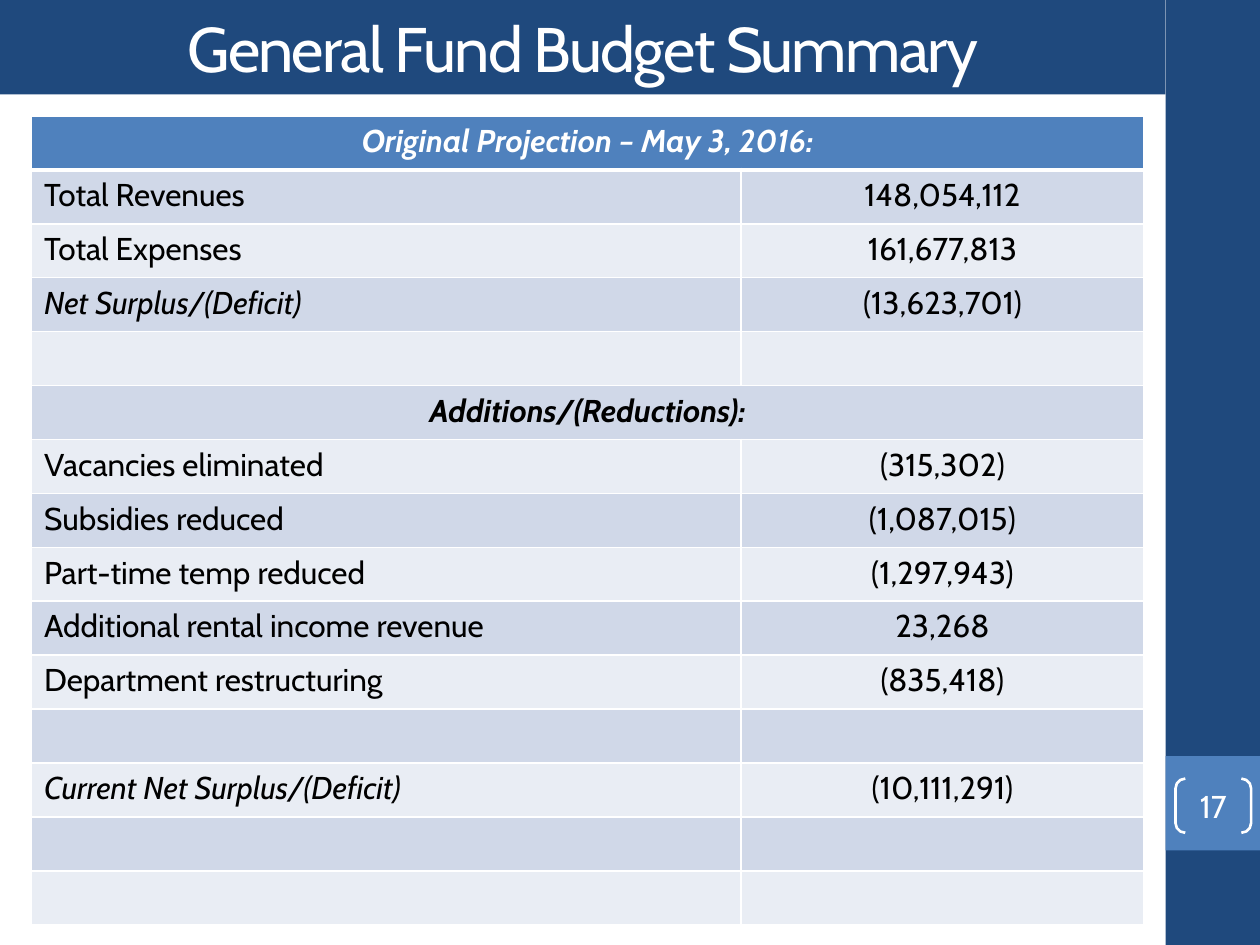
from lxml import etree
from pptx import Presentation
from pptx import util as u
from pptx.dml.color import RGBColor
from pptx.enum import shapes, text
from pptx.oxml.ns import qn

NAVY = RGBColor(0x1F, 0x49, 0x7D)
BLUE = RGBColor(0x4F, 0x81, 0xBD)
BAND_DARK = RGBColor(0xD0, 0xD8, 0xE8)
BAND_LIGHT = RGBColor(0xE9, 0xED, 0xF4)
WHITE = RGBColor(0xFF, 0xFF, 0xFF)
BLACK = RGBColor(0x00, 0x00, 0x00)

COLUMN_WIDTHS = (5.63, 3.2)
# Label, amount (None joins the row), italic label
BUDGET_ROWS = [
    ("Original Projection – May 3, 2016:", None, True),
    ("Total Revenues", "148,054,112", False),
    ("Total Expenses", "161,677,813", False),
    ("Net Surplus/(Deficit)", "(13,623,701)", True),
    ("", "", False),
    ("Additions/(Reductions):", None, True),
    ("Vacancies eliminated", "(315,302)", False),
    ("Subsidies reduced", "(1,087,015)", False),
    ("Part-time temp reduced", "(1,297,943)", False),
    ("Additional rental income revenue", "23,268", False),
    ("Department restructuring", "(835,418)", False),
    ("", "", False),
    ("Current Net Surplus/(Deficit)", "(10,111,291)", True),
    ("", "", False),
    ("", "", False),
]


def write(frame, words, size=18, color=BLACK, bold=False, italic=False,
          centered=True, spacing=None):
    paragraph = frame.paragraphs[0]
    paragraph.alignment = text.PP_ALIGN.CENTER if centered else text.PP_ALIGN.LEFT
    run = paragraph.add_run()
    run.text = words
    font = run.font
    font.name, font.size, font.bold, font.italic = "Cabin", u.Pt(size), bold, italic
    font.color.rgb = color
    if spacing is not None:
        run._r.get_or_add_rPr().set("spc", str(int(spacing * 100)))


def set_borders(cell, **widths):
    """Draw white borders; widths in points by side: L, R, T, B."""
    properties = cell._tc.get_or_add_tcPr()
    for side in "LRTB":
        line = etree.SubElement(properties, qn(f"a:ln{side}"),
                                w=str(u.Pt(widths.get(side, 1))))
        fill = etree.SubElement(line, qn("a:solidFill"))
        etree.SubElement(fill, qn("a:srgbClr"), val=str(WHITE))


class BudgetSlide:
    def __init__(self, presentation):
        self.slide = presentation.slides.add_slide(presentation.slide_layouts[6])

    def shape(self, kind, left, top, width, height, fill=None, line=None):
        shape = self.slide.shapes.add_shape(
            kind, u.Inches(left), u.Inches(top), u.Inches(width), u.Inches(height))
        shape.shadow.inherit = False
        if fill is None:
            shape.fill.background()
        else:
            shape.fill.solid()
            shape.fill.fore_color.rgb = fill
        if line is None:
            shape.line.fill.background()
        else:
            shape.line.color.rgb = line
            shape.line.width = u.Pt(1.5)
        shape.text_frame.vertical_anchor = text.MSO_ANCHOR.MIDDLE
        return shape

    def block(self, left, top, width, height, fill):
        return self.shape(shapes.MSO_SHAPE.RECTANGLE, left, top, width, height, fill)

    def page_number(self, number):
        brackets = self.shape(shapes.MSO_SHAPE.DOUBLE_BRACKET,
                              9.33, 6.18, 0.6, 0.43, line=WHITE)
        brackets.adjustments[0] = 0.18
        frame = brackets.text_frame
        frame.margin_left = frame.margin_right = 0
        frame.margin_top = frame.margin_bottom = 0
        write(frame, number, color=WHITE)

    def table(self, left, top, height, rows):
        table = self.slide.shapes.add_table(
            len(rows), len(COLUMN_WIDTHS), u.Inches(left), u.Inches(top),
            u.Inches(sum(COLUMN_WIDTHS)), u.Inches(height)).table
        for column, width in zip(table.columns, COLUMN_WIDTHS):
            column.width = u.Inches(width)
        for index, (label, amount, italic) in enumerate(rows):
            is_header = index == 0
            is_heading = amount is None
            band = BLUE if is_header else BAND_DARK if index % 2 else BAND_LIGHT
            label_cell, amount_cell = table.cell(index, 0), table.cell(index, 1)
            for cell in (label_cell, amount_cell):
                set_borders(cell, T=3 if index == 1 else 1, B=3 if is_header else 1)
                cell.fill.solid()
                cell.fill.fore_color.rgb = band
            if is_heading:
                label_cell.merge(amount_cell)
            if label:
                write(label_cell.text_frame, label, bold=is_heading, italic=italic,
                      color=WHITE if is_header else BLACK, centered=is_heading)
            if amount:
                write(amount_cell.text_frame, amount)


def main():
    presentation = Presentation()
    presentation.slide_width, presentation.slide_height = u.Inches(10), u.Inches(7.5)
    summary = BudgetSlide(presentation)

    # Side bar and title band
    summary.block(9.25, 0, 0.75, 7.5, NAVY)
    summary.block(9.25, 6, 0.75, 0.75, BLUE)
    title = summary.block(0, 0, 9.25, 0.75, NAVY)
    write(title.text_frame, "General Fund Budget Summary",
          size=36, color=WHITE, spacing=-1)

    # Page number
    summary.page_number("17")

    # Budget table
    summary.table(0.25, 0.92, 6.42, BUDGET_ROWS)

    presentation.save("out.pptx")


if __name__ == "__main__":
    main()
